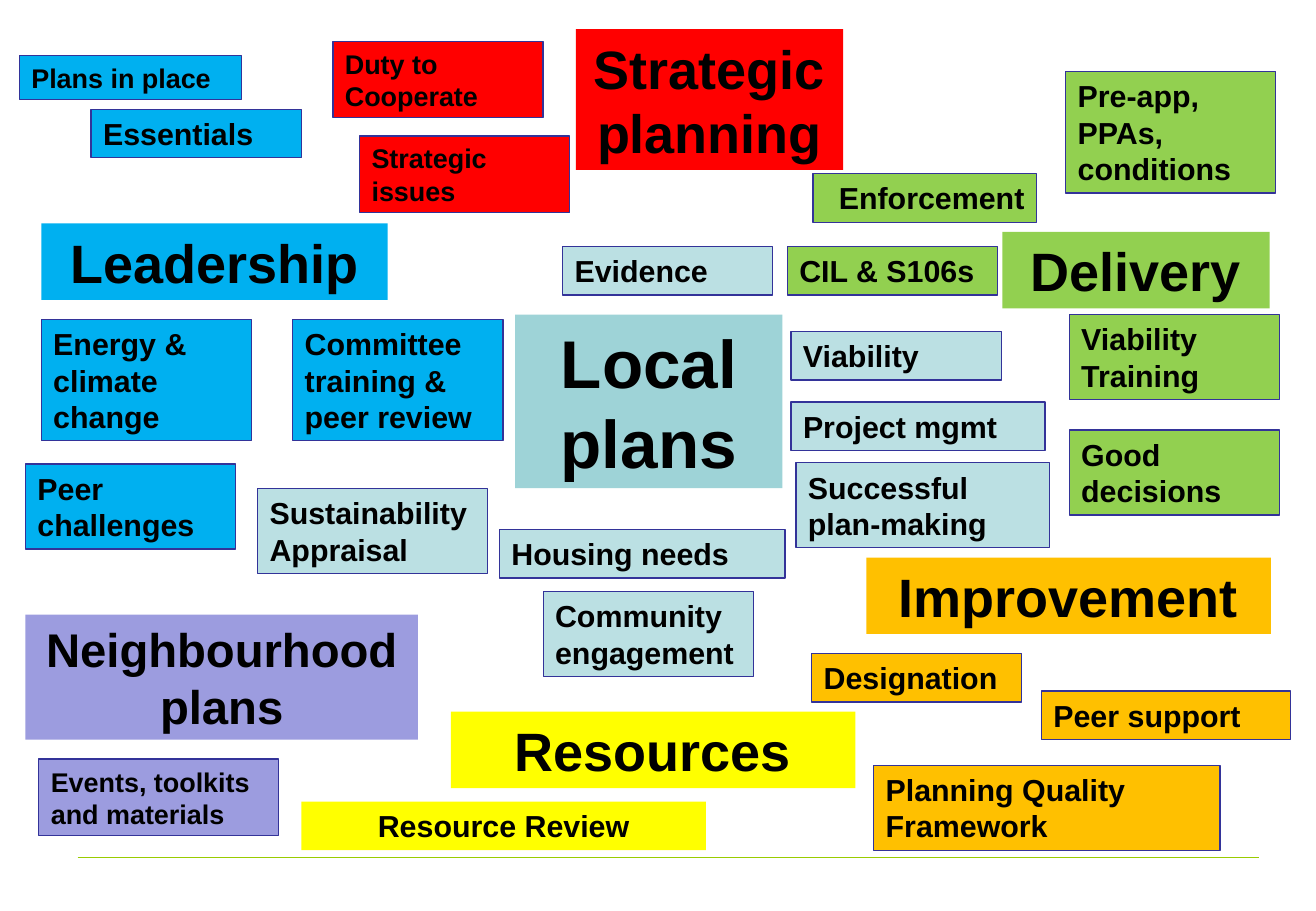
from dataclasses import dataclass
from lxml.etree import SubElement
from pptx import Presentation
from pptx.dml.color import RGBColor
from pptx.enum.shapes import MSO_CONNECTOR, MSO_SHAPE
from pptx.enum.text import MSO_ANCHOR, PP_ALIGN
from pptx.oxml.ns import qn
from pptx.util import Pt

PX = 9144
FONT = "Arial"
BLACK = RGBColor(0x00, 0x00, 0x00)
NAVY = RGBColor(0x33, 0x33, 0x99)
LIME = RGBColor(0x99, 0xCC, 0x00)
BLUE = RGBColor(0x00, 0xB0, 0xF0)
RED = RGBColor(0xFF, 0x00, 0x00)
GREEN = RGBColor(0x92, 0xD0, 0x50)
TEAL = RGBColor(0x9E, 0xD3, 0xD7)
PALE_TEAL = RGBColor(0xBB, 0xE0, 0xE3)
LILAC = RGBColor(0x9C, 0x9C, 0xDF)
AMBER = RGBColor(0xFF, 0xC0, 0x00)
YELLOW = RGBColor(0xFF, 0xFF, 0x00)


@dataclass
class Card:
    """A topic, placed relative to its theme's box."""
    text: str
    left: int
    top: int
    width: int = 173
    lines: int = 1
    size: int = 18
    align: PP_ALIGN = PP_ALIGN.LEFT
    outlined: bool = True


def heading(text, left, top, width, lines=1, size=32):
    """Return a centred card without an outline."""
    return Card(text, left, top, width, lines, size, PP_ALIGN.CENTER, False)


THEMES = [
    ((212, 203), TEAL, PALE_TEAL, [
        heading("Local plans", 212, 56, 220, 2, 40),
        Card("Evidence", 251, 0),
        Card("Viability", 439, 70),
        Card("Project mgmt", 439, 128, 209),
        Card("Successful plan-making", 443, 178, 209, 2),
        Card("Sustainability Appraisal", 0, 199, 189, 2),
        Card("Housing needs", 199, 233, 235),
        Card("Community engagement", 235, 284, lines=2),
    ]),
    ((274, 24), RED, RED, [
        heading("Strategic planning", 200, 0, 220, 2),
        Card("Duty to Cooperate", 0, 10, lines=2, size=16),
        Card("Strategic issues", 22, 88, lines=2, size=16),
    ]),
    ((21, 506), LILAC, LILAC, [
        heading("Neighbourhood plans", 0, 0, 323, 2, 28),
        Card("Events, toolkits and materials", 11, 119, 197, 2, 16),
    ]),
    ((16, 46), BLUE, BLUE, [
        heading("Leadership", 18, 138, 285),
        Card("Plans in place", 0, 0, 183, size=16),
        Card("Essentials", 59, 44),
        Card("Energy & climate change", 18, 217, lines=3),
        Card("Committee training & peer review", 225, 217, lines=3),
        Card("Peer challenges", 5, 336, lines=2),
    ]),
    ((648, 59), GREEN, GREEN, [
        heading("Delivery", 177, 132, 220),
        Card("Pre-app, PPAs, conditions", 229, 0, lines=3),
        Card("Enforcement", 21, 84, 184, align=PP_ALIGN.RIGHT),
        Card("CIL & S106s", 0, 144),
        Card("Viability Training", 232, 200, lines=2),
        Card("Good decisions", 232, 295, lines=2),
    ]),
    ((668, 459), AMBER, AMBER, [
        heading("Improvement", 45, 0, 333),
        Card("Designation", 0, 79),
        Card("Peer support", 189, 110, 205),
        Card("Planning Quality Framework", 51, 171, 285, 2),
    ]),
    ((248, 586), YELLOW, YELLOW, [
        heading("Resources", 123, 0, 333),
        heading("Resource Review", 0, 74, 333, size=18),
    ]),
]


def add_card(page, left, top, card, color):
    """Draw one card, as tall as its lines of text need."""
    height = 10 + card.lines * card.size * 5 // 3
    box = page.shapes.add_shape(
        MSO_SHAPE.RECTANGLE, left * PX, top * PX, card.width * PX, height * PX)
    box.shadow.inherit = False
    box.fill.solid()
    box.fill.fore_color.rgb = color
    if card.outlined:
        box.line.color.rgb = NAVY
        box.line.width = Pt(0.75)
    else:
        box.line.fill.background()
    frame = box.text_frame
    frame.word_wrap = True
    frame.vertical_anchor = MSO_ANCHOR.TOP
    para = frame.paragraphs[0]
    para.text = card.text
    para.alignment = card.align
    para.font.name = FONT
    para.font.size = Pt(card.size)
    para.font.bold = True
    para.font.color.rgb = BLACK


def add_theme(page, origin, heading_color, card_color, cards):
    """Draw a theme's heading and cards from the corner of its box."""
    left, top = origin
    for card in cards:
        color = card_color if card.outlined else heading_color
        add_card(page, left + card.left, top + card.top, card, color)


def add_footer_rule(page, left, top, width):
    """Draw the thin rule at the foot of the page."""
    rule = page.shapes.add_connector(
        MSO_CONNECTOR.STRAIGHT, left * PX, top * PX, (left + width) * PX, top * PX)
    rule.line.color.rgb = LIME
    rule.line.width = Pt(0.75)
    SubElement(rule._element.spPr, qn("a:effectLst"))


def main():
    """Build the map of planning themes."""
    deck = Presentation()
    deck.slide_width = 1083 * PX
    deck.slide_height = 750 * PX
    page = deck.slides.add_slide(deck.slide_layouts[6])
    add_footer_rule(page, 64, 706, 972)
    for theme in THEMES:
        add_theme(page, *theme)
    deck.save("out.pptx")


if __name__ == "__main__":
    main()
